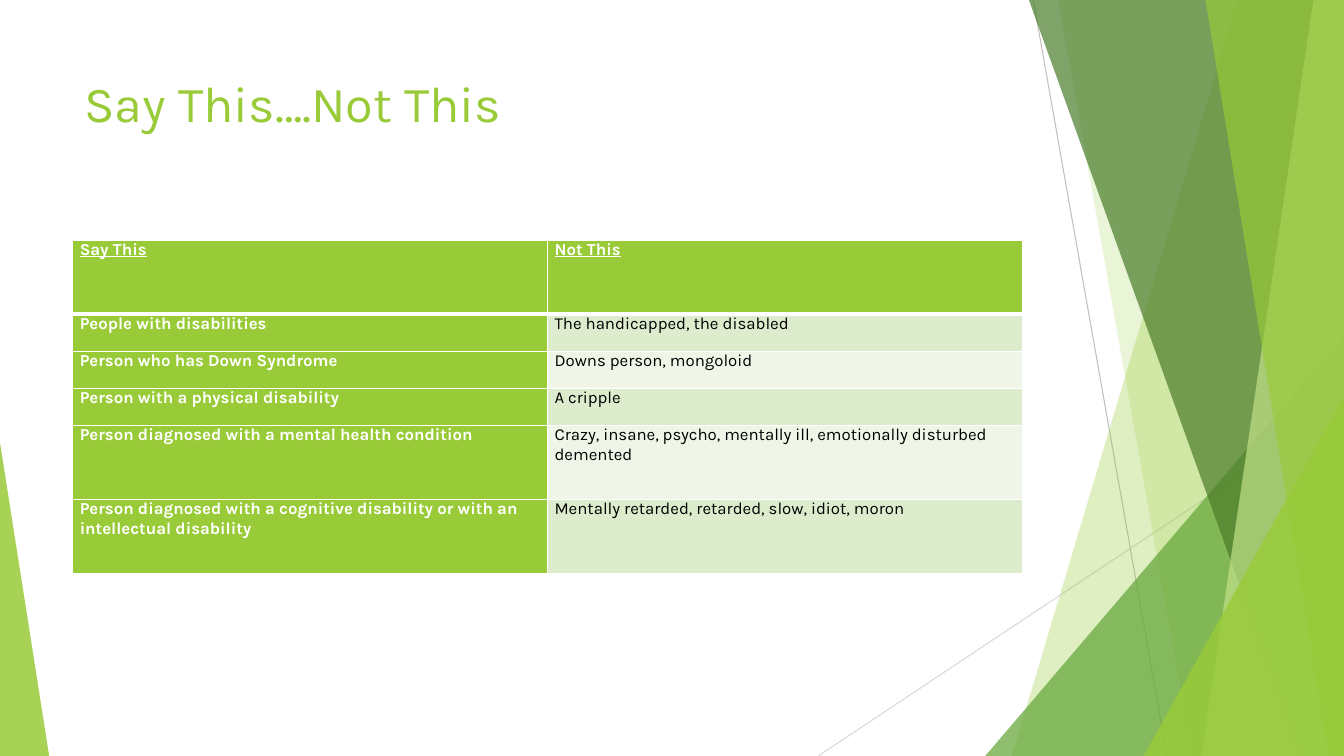
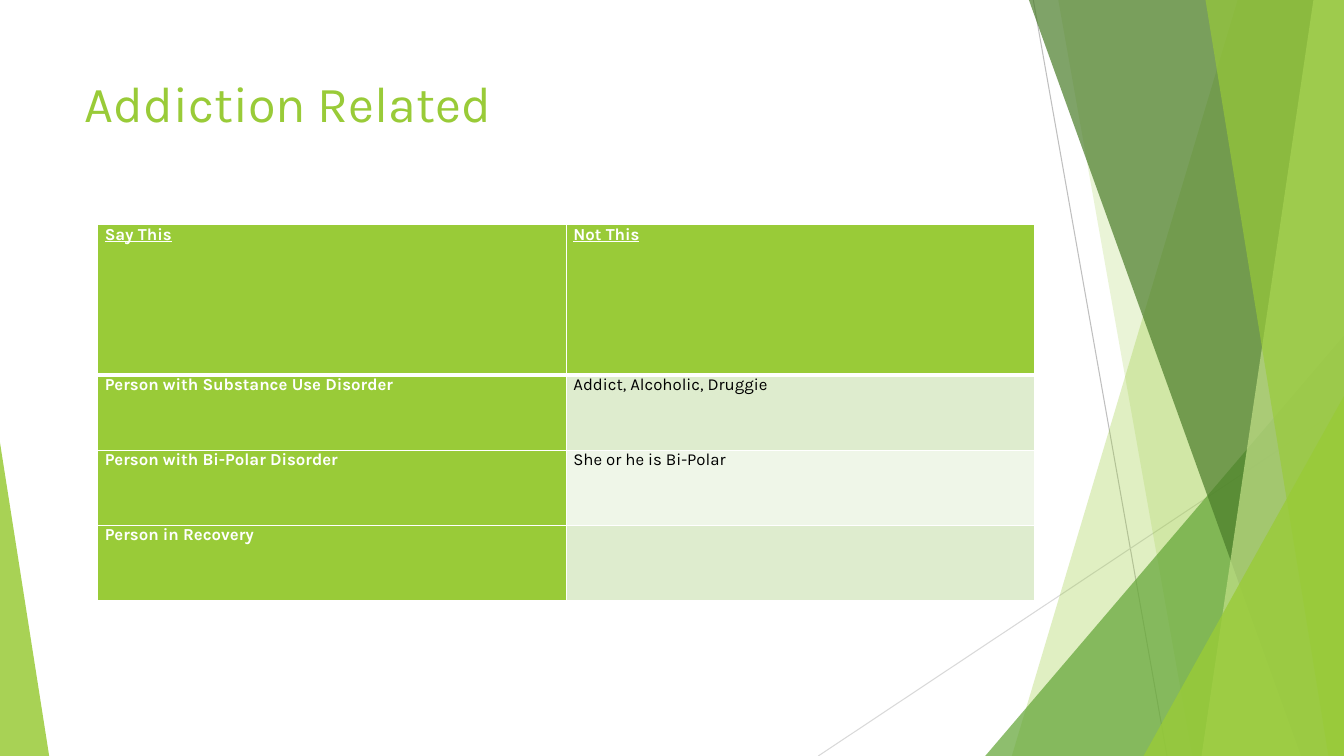
from lxml.etree import SubElement
from pptx import Presentation
from pptx.dml.color import RGBColor
from pptx.enum.shapes import MSO_CONNECTOR, MSO_SHAPE
from pptx.enum.text import MSO_ANCHOR
from pptx.oxml import parse_xml
from pptx.oxml.ns import nsdecls, qn
from pptx.util import Cm, Pt

LIME, GREEN, DARK, PALE = "99CB38", "63A537", "4A7C29", "C2E088"
WHITE, BLACK = "FFFFFF", "000000"
TINTS = ("DEECCE", "EFF6E8")
PAGE = (0, 0, 33.87, 19.05)

TITLE = {"name": "Karla", "size": Pt(36)}
BODY = {"name": "Karla", "size": Pt(12), "bold": False}
LABEL = {**BODY, "bold": True}
HEAD = {**LABEL, "underline": True}
FRAME = {"word_wrap": True, "vertical_anchor": MSO_ANCHOR.TOP}
INSETS = {"margin_left": Cm(0.18), "margin_right": Cm(0.18),
          "margin_top": 0, "margin_bottom": 0}
FLAGS = {"first_row": True, "first_col": True, "horz_banding": True}

LINES = [((26.04, 0), (29.41, 19.05), "BFBFBF"),
         ((33.87, 10.24), (20.62, 19.05), "D9D9D9")]
# Bands give the top and bottom x of their left edge; wedges give width and height.
SHARDS = [("band", 31.19, 25.5, LIME, 30),
          ("band", 26.67, 30.05, LIME, 20),
          ("right", 9.04, 10.59, GREEN, 72),
          ("band", 25.93, 32.79, DARK, 70),
          ("band", 33.1, 30.28, PALE, 70),
          ("band", 30.38, 33.48, LIME, 65),
          ("right", 5.05, 9.07, LIME, 80),
          ("left", 1.24, 7.9, LIME, 85)]

SLIDES = [
    ("Say This….Not This", (1.83, 6.05, 23.93, 8.41), (2, 1, 1, 1, 2, 2), [
        ("Say This", "Not This"),
        ("People with disabilities", "The handicapped, the disabled"),
        ("Person who has Down Syndrome", "Downs person, mongoloid"),
        ("Person with a physical disability", "A cripple"),
        ("Person diagnosed with a mental health condition",
         "Crazy, insane, psycho, mentally ill, emotionally disturbed demented"),
        ("Person diagnosed with a cognitive disability or with an "
         "intellectual disability",
         "Mentally retarded, retarded, slow, idiot, moron")]),
    ("Addiction Related", (2.46, 5.66, 23.62, 9.47), (2, 1, 1, 1), [
        ("Say This", "Not This"),
        ("Person with Substance Use Disorder", "Addict, Alcoholic, Druggie"),
        ("Person with Bi-Polar Disorder", "She or he is Bi-Polar"),
        ("Person in Recovery", "")]),
]


def style(item, values):
    """Set each named attribute of an item."""
    for name, value in values.items():
        setattr(item, name, value)


def paint(fill, color):
    """Make a fill solid in a hex colour."""
    fill.solid()
    fill.fore_color.rgb = RGBColor.from_string(color)


def write(frame, text, look, color):
    """Put one styled run into a text frame."""
    run = frame.paragraphs[0].add_run()
    run.text = text
    style(run.font, look)
    paint(run.font.fill, color)


def rule(slide, box, start, end, color):
    """Draw a thin line inside a box."""
    left, top = box[:2]
    ends = [Cm(base + step) for point in (start, end)
            for base, step in zip((left, top), point)]
    line = slide.shapes.add_connector(MSO_CONNECTOR.STRAIGHT, *ends)
    line.line.width = Pt(0.75)
    paint(line.line.fill, color)
    SubElement(line.element.spPr, qn("a:effectLst"))


def band(slide, box, upper, lower):
    """Build a band from a slanted edge to the right side of a box."""
    left, top, width, height = box
    right, base = Cm(left + width), Cm(top + height)
    pen = slide.shapes.build_freeform(Cm(left + upper), Cm(top))
    pen.add_line_segments([(right, Cm(top)), (right, base),
                           (Cm(left + lower), base)])
    return pen.convert_to_shape()


def wedge(slide, box, side, wide, high):
    """Stand a right triangle in a bottom corner of a box."""
    left, top, width, height = box
    tip = int(side == "right")
    place = (left + tip * (width - wide), top + height - high, wide, high)
    shape = slide.shapes.add_shape(MSO_SHAPE.ISOSCELES_TRIANGLE,
                                   *map(Cm, place))
    shape.adjustments[0] = tip
    return shape


def decor(slide, box):
    """Draw the lines and clear green shards around a box."""
    for line in LINES:
        rule(slide, box, *line)
    for kind, first, second, color, alpha in SHARDS:
        if kind == "band":
            shape = band(slide, box, first, second)
        else:
            shape = wedge(slide, box, kind, first, second)
        shape.shadow.inherit = False
        shape.line.fill.background()
        paint(shape.fill, color)
        tone = shape.element.spPr.find(qn("a:solidFill"))[0]
        SubElement(tone, qn("a:alpha")).set("val", str(alpha * 1000))


def title(slide, box, text):
    """Write the slide title in a box."""
    frame = slide.shapes.add_textbox(*map(Cm, box)).text_frame
    style(frame, FRAME)
    write(frame, text, TITLE, LIME)


def edge(cell, row):
    """Give a cell white borders, thick under the header."""
    props = cell._tc.get_or_add_tcPr()
    widths = {"L": 1, "R": 1, "T": 3 if row == 1 else 1,
              "B": 3 if row == 0 else 1}
    for spot, (side, width) in enumerate(widths.items()):
        props.insert(spot, parse_xml(
            f'<a:ln{side} {nsdecls("a")} w="{Pt(width)}"><a:solidFill>'
            f'<a:srgbClr val="{WHITE}"/></a:solidFill></a:ln{side}>'))


def grid(slide, box, shares, rows):
    """Fill a box with a table whose row heights follow the shares."""
    count = len(rows[0])
    table = slide.shapes.add_table(len(rows), count, *map(Cm, box)).table
    style(table, FLAGS)
    for col in table.columns:
        col.width = Cm(box[2] / count)
    for i, (share, texts) in enumerate(zip(shares, rows)):
        table.rows[i].height = Cm(box[3] * share / sum(shares))
        for j, text in enumerate(texts):
            cell = table.cell(i, j)
            style(cell, INSETS)
            plain = i > 0 and j > 0
            paint(cell.fill, TINTS[(i - 1) % 2] if plain else LIME)
            edge(cell, i)
            if text:
                look = BODY if plain else LABEL if i else HEAD
                write(cell.text_frame, text, look, BLACK if plain else WHITE)


def main():
    """Build and save the slides."""
    deck = Presentation()
    style(deck, {"slide_width": Cm(PAGE[2]), "slide_height": Cm(PAGE[3])})
    for text, box, shares, rows in SLIDES:
        slide = deck.slides.add_slide(deck.slide_layouts[6])
        decor(slide, PAGE)
        title(slide, (1.88, 1.7, 23.88, 3.66), text)
        grid(slide, box, shares, rows)
    deck.save("out.pptx")


if __name__ == "__main__":
    main()
